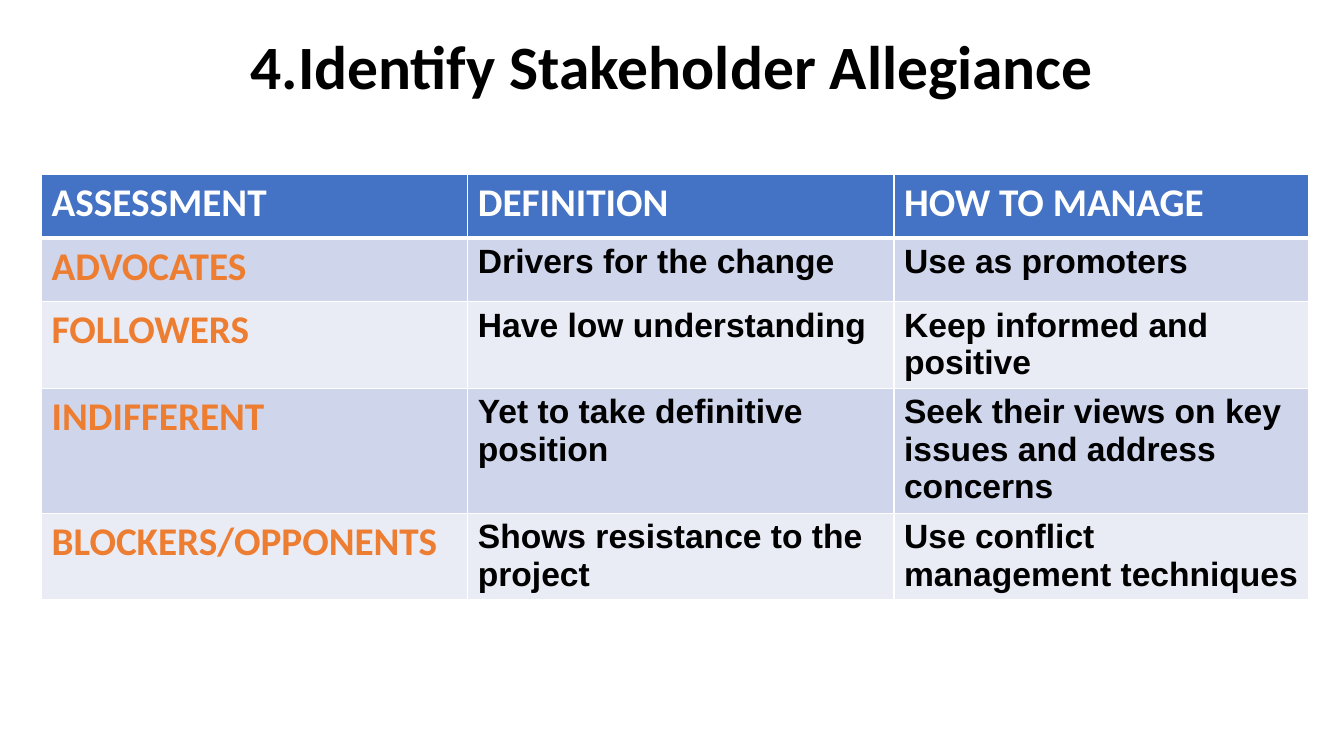
import pptx
import pptx.dml.color
import pptx.enum.text
import pptx.oxml
import pptx.oxml.ns
import pptx.util
from pptx.util import Cm

COLORS = {
    "white": "FFFFFF",
    "black": "000000",
    "header": "4472C4",
    "odd": "CFD5EA",
    "even": "E9EBF5",
    "label": "ED7D31",
}

ROWS = [
    ("ASSESSMENT", "DEFINITION", "HOW TO MANAGE"),
    ("ADVOCATES", "Drivers for the change", "Use as promoters"),
    ("FOLLOWERS", "Have low understanding", "Keep informed and positive"),
    ("INDIFFERENT", "Yet to take definitive position",
     "Seek their views on key issues and address concerns"),
    ("BLOCKERS/OPPONENTS", "Shows resistance to the project",
     "Use conflict management techniques"),
]
COLUMN_WIDTHS = (10.74, 10.74, 10.45)
ROW_HEIGHTS = (1.6, 1.6, 2.18, 3.15, 2.18)


class SlideBuilder:
    heading_font = "Calibri"
    body_font = "Arial"

    def __init__(self, prs):
        self.s = prs.slides.add_slide(prs.slide_layouts[5])

    def color(self, name):
        return pptx.dml.color.RGBColor.from_string(COLORS[name])

    def format_runs(self, p, font, size, color):
        for r in p.runs:
            r.font.name = font
            r.font.size = pptx.util.Pt(size)
            r.font.bold = True
            r.font.color.rgb = self.color(color)

    def title(self, text, left, top, width, height):
        sp = self.s.shapes.title
        sp.left, sp.top, sp.width, sp.height = Cm(left), Cm(top), Cm(width), Cm(height)
        tf = sp.text_frame
        tf.text = text
        tf.word_wrap = True
        tf.vertical_anchor = pptx.enum.text.MSO_ANCHOR.TOP
        p = tf.paragraphs[0]
        p.alignment = pptx.enum.text.PP_ALIGN.CENTER
        p.line_spacing = 0.9
        self.format_runs(p, self.heading_font, 44, "black")

    def border(self, cell, side, points):
        width = pptx.util.Pt(points)
        cell._tc.get_or_add_tcPr().append(pptx.oxml.parse_xml(
            f'<a:{side} {pptx.oxml.ns.nsdecls("a")} w="{width}"><a:solidFill>'
            f'<a:srgbClr val="{COLORS["white"]}"/></a:solidFill></a:{side}>'))

    def cell(self, cell, text, row, column):
        for side in ("lnL", "lnR", "lnT", "lnB"):
            under_header = (row, side) in ((0, "lnB"), (1, "lnT"))
            self.border(cell, side, 3 if under_header else 1)
        fill = "header" if row == 0 else "odd" if row % 2 else "even"
        cell.fill.solid()
        cell.fill.fore_color.rgb = self.color(fill)
        cell.text_frame.text = text
        p = cell.text_frame.paragraphs[0]
        if row == 0:
            self.format_runs(p, self.heading_font, 28, "white")
        elif column == 0:
            self.format_runs(p, self.heading_font, 28, "label")
        else:
            self.format_runs(p, self.body_font, 24, "black")

    def table(self, rows, left, top, widths, heights):
        table = self.s.shapes.add_table(
            len(rows), len(widths), Cm(left), Cm(top),
            Cm(sum(widths)), Cm(sum(heights))).table
        for column, width in zip(table.columns, widths):
            column.width = Cm(width)
        for i, (texts, height) in enumerate(zip(rows, heights)):
            table.rows[i].height = Cm(height)
            for j, text in enumerate(texts):
                self.cell(table.cell(i, j), text, i, j)


def main():
    prs = pptx.Presentation()
    prs.slide_width, prs.slide_height = Cm(33.87), Cm(19.05)
    slide = SlideBuilder(prs)
    slide.title("4.Identify Stakeholder Allegiance", 5.97, 0.79, 21.95, 3.68)
    slide.table(ROWS, 1.05, 4.4, COLUMN_WIDTHS, ROW_HEIGHTS)
    prs.save("out.pptx")


if __name__ == "__main__":
    main()
